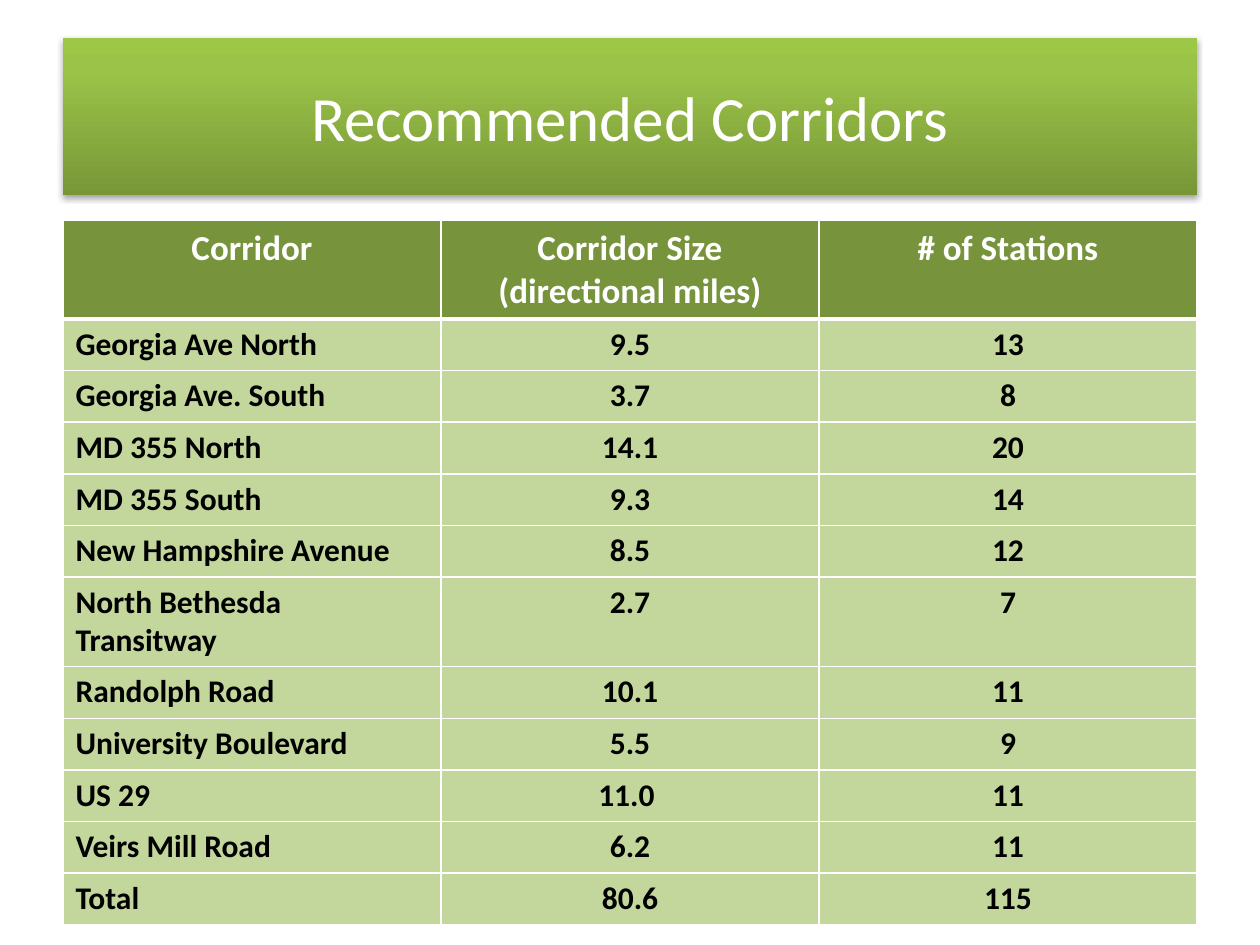
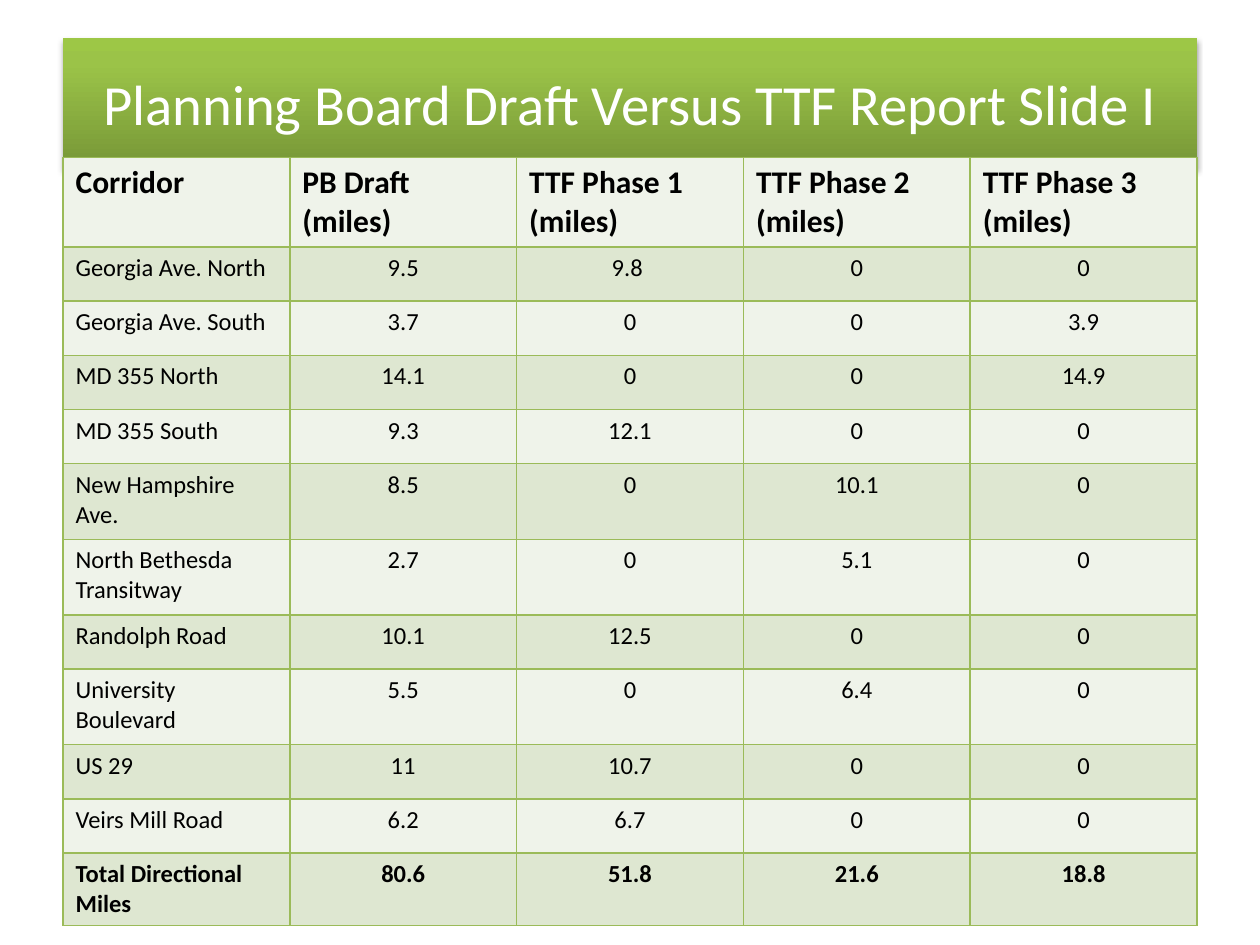
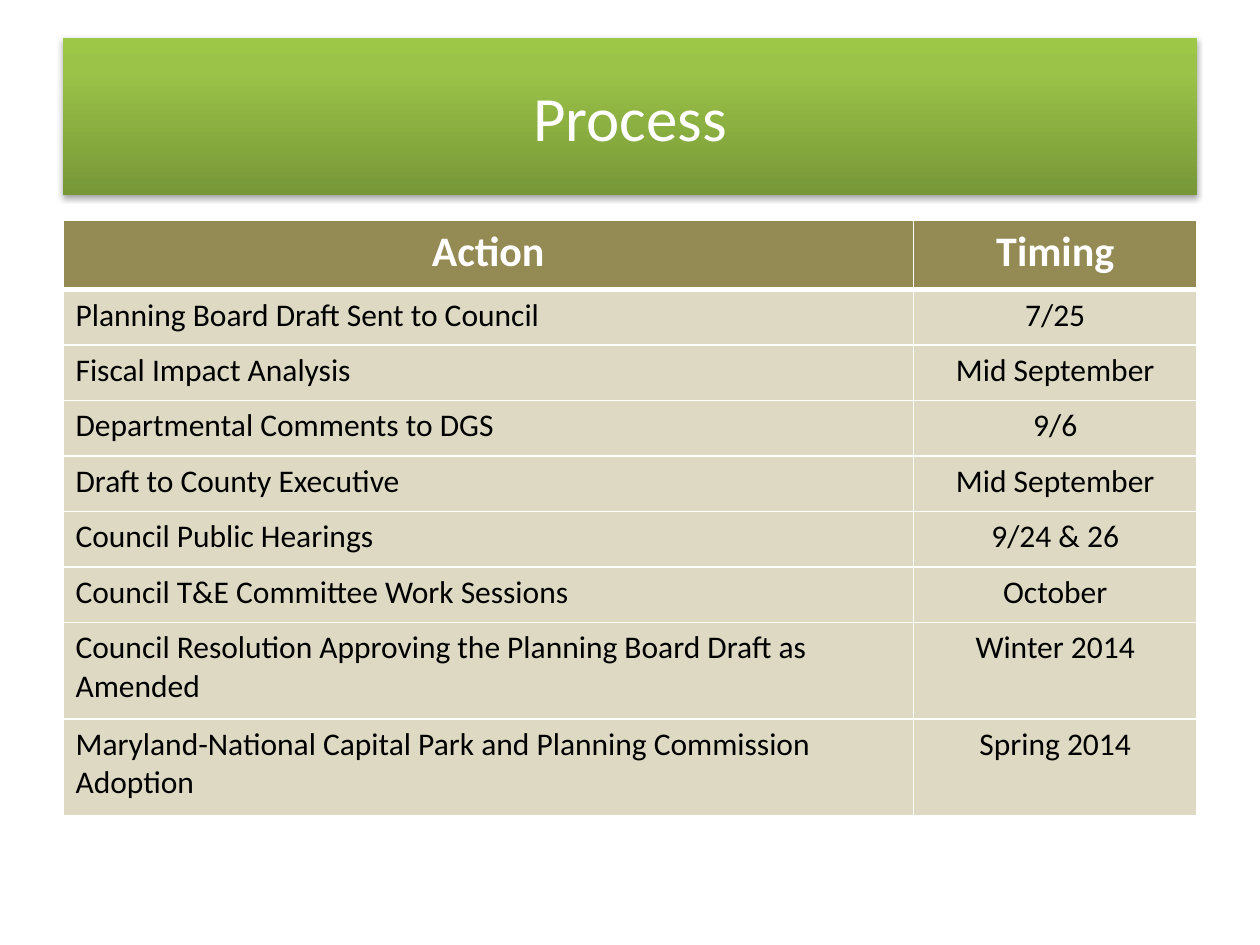
from dataclasses import dataclass

from lxml import etree
from pptx import Presentation
from pptx.dml.color import RGBColor
from pptx.enum.text import MSO_ANCHOR, MSO_AUTO_SIZE, PP_ALIGN as Align
from pptx.oxml import parse_xml
from pptx.oxml.ns import nsdecls, qn
from pptx.util import Inches, Pt

# Shared look
FONT = "Calibri"
WHITE = RGBColor(0xFF, 0xFF, 0xFF)
BLACK = RGBColor(0x00, 0x00, 0x00)
BAND_DARK = RGBColor(0x77, 0x97, 0x37)
BAND_MIDDLE = RGBColor(0x9B, 0xC3, 0x48)
BAND_LIGHT = RGBColor(0x9D, 0xC7, 0x46)
OLIVE = RGBColor(0x77, 0x93, 0x3C)
PALE_OLIVE = RGBColor(0xC3, 0xD6, 0x9B)
GRID_GREEN = RGBColor(0x9B, 0xBB, 0x59)
MIST = RGBColor(0xEF, 0xF3, 0xEA)
SAGE = RGBColor(0xDE, 0xE7, 0xD1)
KHAKI = RGBColor(0x94, 0x8A, 0x54)
SAND = RGBColor(0xDD, 0xD9, 0xC3)
LEFT, WIDTH = 0.5, 9
TITLE_TOP, TITLE_HEIGHT = 0.3, 1.25
TITLE_ONLY = 5


@dataclass
class TableStyle:
    header_fill: RGBColor
    body_fills: tuple
    border: RGBColor
    header_size: float
    body_size: float
    header_color: RGBColor = WHITE
    header_align: Align = Align.CENTER
    header_rule: float = 3
    body_bold: bool = False
    total_bold: bool = False


CORRIDOR_STYLE = TableStyle(OLIVE, (PALE_OLIVE,), WHITE, 20, 18,
                            body_bold=True, total_bold=True)
COMPARISON_STYLE = TableStyle(MIST, (SAGE, MIST), GRID_GREEN, 18, 14,
                              header_color=BLACK, header_align=Align.LEFT,
                              header_rule=1, total_bold=True)
PROCESS_STYLE = TableStyle(KHAKI, (SAND,), WHITE, 24, 18)

# Table contents
CORRIDORS = [
    ("Corridor", "Corridor Size (directional miles)", "# of Stations"),
    ("Georgia Ave North", "9.5", "13"),
    ("Georgia Ave. South", "3.7", "8"),
    ("MD 355 North", "14.1", "20"),
    ("MD 355 South", "9.3", "14"),
    ("New Hampshire Avenue", "8.5", "12"),
    ("North Bethesda Transitway", "2.7", "7"),
    ("Randolph Road", "10.1", "11"),
    ("University Boulevard", "5.5", "9"),
    ("US 29", "11.0 ", "11"),
    ("Veirs Mill Road", "6.2", "11"),
    ("Total", "80.6", "115"),
]
COMPARISON = [
    ("Corridor", "PB Draft (miles)", "TTF Phase 1 (miles)",
     "TTF Phase 2 (miles)", "TTF Phase 3 (miles)"),
    ("Georgia Ave. North", "9.5", "9.8 ", "0", "0"),
    ("Georgia Ave. South", "3.7", "0", "0", "3.9"),
    ("MD 355 North", "14.1", "0", "0", "14.9"),
    ("MD 355 South", "9.3", "12.1", "0", "0"),
    ("New Hampshire Ave.", "8.5", "0", "10.1", "0"),
    ("North Bethesda Transitway", "2.7", "0", "5.1", "0"),
    ("Randolph Road", "10.1", "12.5", "0", "0"),
    ("University Boulevard", "5.5", "0", "6.4", "0"),
    ("US 29", "11", "10.7", "0", "0"),
    ("Veirs Mill Road", "6.2", "6.7", "0", "0"),
    ("Total Directional Miles", "80.6", "51.8", "21.6", "18.8"),
]
PROCESS = [
    ("Action", "Timing"),
    ("Planning Board Draft Sent to Council", "7/25"),
    ("Fiscal Impact Analysis", "Mid September"),
    ("Departmental Comments to DGS", "9/6"),
    ("Draft to County Executive", "Mid September"),
    ("Council Public Hearings", "9/24 & 26"),
    ("Council T&E Committee Work Sessions", "October"),
    ("Council Resolution Approving the Planning Board Draft as Amended",
     "Winter 2014"),
    ("Maryland-National Capital Park and Planning Commission Adoption",
     "Spring 2014"),
]


def write_text(frame, text, align, color, **formats):
    """Fill a text frame with one formatted paragraph."""
    para = frame.paragraphs[0]
    para.alignment = align
    span = para.add_run()
    span.text = text
    span.font.color.rgb = color
    for name, value in {"name": FONT, **formats}.items():
        setattr(span.font, name, value)


def paint_band(shape):
    """Give a shape the green gradient and the soft shadow of the title band."""
    stops = "".join(
        f'<a:gs pos="{position * 1000}"><a:srgbClr val="{color}"/></a:gs>'
        for position, color in ((0, BAND_DARK), (80, BAND_MIDDLE), (100, BAND_LIGHT)))
    properties = shape._element.spPr
    properties.append(parse_xml(
        f'<a:gradFill {nsdecls("a")} rotWithShape="1"><a:gsLst>{stops}</a:gsLst>'
        '<a:lin ang="16200000" scaled="0"/></a:gradFill>'))
    shape.line.fill.background()
    properties.append(parse_xml(
        f'<a:effectLst {nsdecls("a")}><a:outerShdw blurRad="{Pt(3.1)}" '
        f'dist="{Pt(1.8)}" dir="5400000" rotWithShape="0"><a:srgbClr val="000000">'
        '<a:alpha val="35000"/></a:srgbClr></a:outerShdw></a:effectLst>'))


def add_titled_page(deck, text, height=TITLE_HEIGHT, size=36):
    page = deck.slides.add_slide(deck.slide_layouts[TITLE_ONLY])
    title = page.shapes.title
    title.left, title.top = Inches(LEFT), Inches(TITLE_TOP)
    title.width, title.height = Inches(WIDTH), Inches(height)
    paint_band(title)
    frame = title.text_frame
    for name, value in {"word_wrap": True, "auto_size": MSO_AUTO_SIZE.NONE,
                        "vertical_anchor": MSO_ANCHOR.MIDDLE}.items():
        setattr(frame, name, value)
    write_text(frame, text, Align.CENTER, WHITE, size=Pt(size))
    return page


def set_borders(cell, color, top=1, bottom=1):
    properties = cell._tc.get_or_add_tcPr()
    for side, width in {"L": 1, "R": 1, "T": top, "B": bottom}.items():
        line = etree.SubElement(properties, qn(f"a:ln{side}"), w=str(Pt(width)))
        fill = etree.SubElement(line, qn("a:solidFill"))
        etree.SubElement(fill, qn("a:srgbClr"), val=str(color))


def format_cell(cell, text, row, column, last_row, style):
    header = row == 0
    # Borders come before the fill in a cell's properties
    set_borders(cell, style.border,
                top=style.header_rule if row == 1 else 1,
                bottom=style.header_rule if header else 1)
    cell.fill.solid()
    if header:
        cell.fill.fore_color.rgb = style.header_fill
        align, color, size, bold = (style.header_align, style.header_color,
                                    style.header_size, True)
    else:
        cell.fill.fore_color.rgb = style.body_fills[(row - 1) % len(style.body_fills)]
        align = Align.CENTER if column else Align.LEFT
        color, size = BLACK, style.body_size
        bold = style.total_bold if row == last_row else style.body_bold
    write_text(cell.text_frame, text, align, color, size=Pt(size), bold=bold)


def add_grid(page, rows, top, widths, row_height, style, special_heights):
    """Add a table; special_heights maps row numbers to other heights."""
    heights = [special_heights.get(row, row_height) for row in range(len(rows))]
    table = page.shapes.add_table(
        len(rows), len(widths), Inches(LEFT), Inches(top),
        Inches(WIDTH), Inches(sum(heights))).table
    table.horz_banding = False
    for column, width in zip(table.columns, widths):
        column.width = Inches(width)
    for row, texts in enumerate(rows):
        table.rows[row].height = Inches(heights[row])
        for column, text in enumerate(texts):
            format_cell(table.cell(row, column), text, row, column,
                        len(rows) - 1, style)


def main():
    deck = Presentation()
    deck.slide_width, deck.slide_height = Inches(10), Inches(7.5)

    # Corridor sizes and stations
    page = add_titled_page(deck, "Recommended Corridors")
    add_grid(page, CORRIDORS, 1.75, [WIDTH / 3] * 3, 0.41, CORRIDOR_STYLE, {6: 0.71})

    # Draft miles against the three phases
    page = add_titled_page(deck, "Planning Board Draft Versus TTF Report Slide I",
                           height=1.03, size=32.4)
    add_grid(page, COMPARISON, 1.25, [WIDTH / 5] * 5, 0.43, COMPARISON_STYLE,
             {0: 0.42, 5: 0.6, 6: 0.6, 8: 0.6})

    # Approval steps and dates
    page = add_titled_page(deck, "Process")
    add_grid(page, PROCESS, 1.75, [6.75, 2.25], 0.44, PROCESS_STYLE,
             {0: 0.55, 7: 0.77, 8: 0.77})

    deck.save("out.pptx")


if __name__ == "__main__":
    main()
